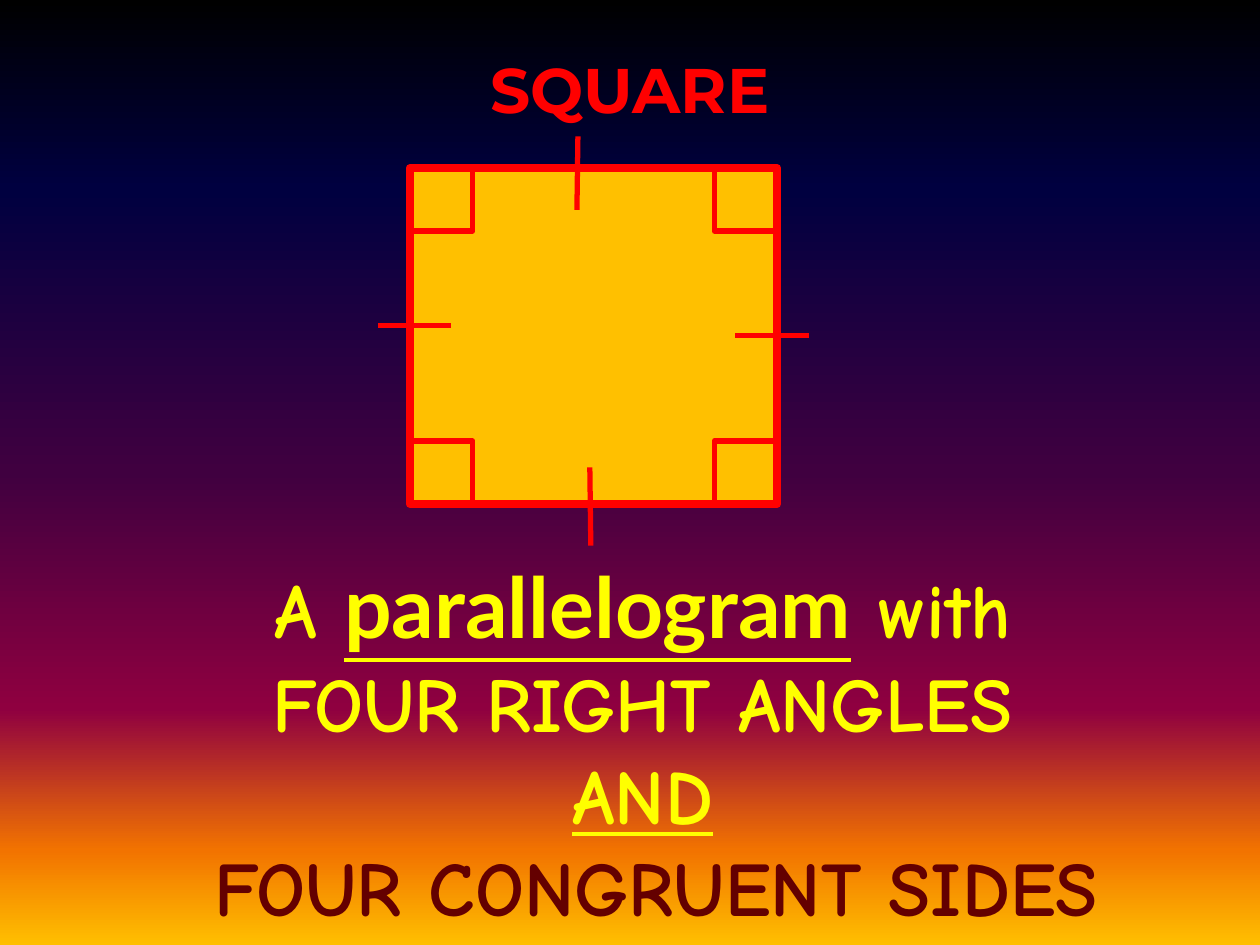
"""Build a slide that defines the square by its angles and sides."""
from dataclasses import dataclass
from itertools import product
from typing import Optional

from lxml.etree import SubElement
from pptx import Presentation
from pptx.dml.color import RGBColor
from pptx.enum.shapes import MSO_CONNECTOR, MSO_SHAPE
from pptx.enum.text import MSO_ANCHOR, PP_ALIGN
from pptx.oxml.ns import qn
from pptx.slide import Slide
from pptx.util import Cm, Pt

COLOURS = {"red": "FF0000", "gold": "FFC000", "yellow": "FFFF00", "maroon": "640000"}
SUNSET = {0: "000000", 20: "000040", 50: "400040", 75: "8F0040", 90: "F27300", 100: "FFBF00"}


@dataclass(frozen=True)
class Box:
    left: float
    top: float
    width: float
    height: float

    def lengths(self) -> tuple:
        return Cm(self.left), Cm(self.top), Cm(self.width), Cm(self.height)


@dataclass(frozen=True)
class Tick:
    start_x: float
    start_y: float
    end_x: float
    end_y: float


@dataclass(frozen=True)
class Phrase:
    text: str
    colour: str = "yellow"
    font: str = "Comic Neue"
    size: int = 44
    underline: bool = False


SQUARE = Box(8.26, 3.39, 7.41, 6.77)
CORNER_SIDE = 1.27
TICKS = [
    Tick(7.62, 6.56, 9.1, 6.56),
    Tick(11.89, 9.42, 11.91, 11),
    Tick(11.65, 2.75, 11.63, 4.23),
    Tick(14.82, 6.77, 16.3, 6.77),
]
DEFINITION = [
    [Phrase("A "), Phrase("parallelogram", font="Lato", size=48, underline=True), Phrase(" with ")],
    [Phrase("FOUR RIGHT ANGLES ")],
    [Phrase("AND", underline=True), Phrase(" ")],
    [Phrase("FOUR CONGRUENT SIDES", colour="maroon")],
]


def colour_of(name: str) -> RGBColor:
    return RGBColor.from_string(COLOURS[name])


def paint_background(slide: Slide) -> None:
    fill = slide.background.fill
    fill.gradient()
    fill.gradient_angle = 270
    stops = slide.element.find(".//" + qn("a:gsLst"))
    for stop in list(stops):
        stops.remove(stop)
    for percent, colour in SUNSET.items():
        stop = SubElement(stops, qn("a:gs"), pos=str(percent * 1000))
        SubElement(stop, qn("a:srgbClr"), val=colour)


def draw_rectangle(slide: Slide, box: Box, line_width: float, fill: Optional[str] = None) -> None:
    shape = slide.shapes.add_shape(MSO_SHAPE.RECTANGLE, *box.lengths())
    shape.shadow.inherit = False
    if fill:
        shape.fill.solid()
        shape.fill.fore_color.rgb = colour_of(fill)
    else:
        shape.fill.background()
    shape.line.color.rgb = colour_of("red")
    shape.line.width = Pt(line_width)


def draw_corners(slide: Slide) -> None:
    lefts = (SQUARE.left, SQUARE.left + SQUARE.width - CORNER_SIDE)
    tops = (SQUARE.top, SQUARE.top + SQUARE.height - CORNER_SIDE)
    for left, top in product(lefts, tops):
        draw_rectangle(slide, Box(left, top, CORNER_SIDE, CORNER_SIDE), 3)


def draw_tick(slide: Slide, tick: Tick) -> None:
    connector = slide.shapes.add_connector(
        MSO_CONNECTOR.STRAIGHT,
        Cm(tick.start_x), Cm(tick.start_y), Cm(tick.end_x), Cm(tick.end_y),
    )
    connector.line.color.rgb = colour_of("red")
    connector.line.width = Pt(3)
    SubElement(connector.element.spPr, qn("a:effectLst"))


def write_phrase(paragraph, phrase: Phrase) -> None:
    run = paragraph.add_run()
    run.text = phrase.text
    run.font.name = phrase.font
    run.font.size = Pt(phrase.size)
    run.font.bold = True
    run.font.underline = phrase.underline
    run.font.color.rgb = colour_of(phrase.colour)


def write_title(slide: Slide) -> None:
    title = slide.shapes.title
    title.left, title.top, title.width, title.height = Box(2.54, 0.84, 20.32, 1.9).lengths()
    text_frame = title.text_frame
    text_frame.word_wrap = False
    text_frame.vertical_anchor = MSO_ANCHOR.MIDDLE
    paragraph = text_frame.paragraphs[0]
    paragraph.alignment = PP_ALIGN.CENTER
    write_phrase(paragraph, Phrase("SQUARE", "red", "Montserrat", 36))


def write_definition(slide: Slide) -> None:
    text_frame = slide.shapes.add_textbox(*Box(1.27, 11.05, 23.93, 7.95).lengths()).text_frame
    text_frame.word_wrap = True
    for index, phrases in enumerate(DEFINITION):
        paragraph = text_frame.add_paragraph() if index else text_frame.paragraphs[0]
        paragraph.alignment = PP_ALIGN.CENTER
        for phrase in phrases:
            write_phrase(paragraph, phrase)


def main() -> None:
    presentation = Presentation()
    presentation.slide_width, presentation.slide_height = Cm(25.4), Cm(19.05)
    slide = presentation.slides.add_slide(presentation.slide_layouts[5])
    paint_background(slide)
    write_title(slide)
    draw_rectangle(slide, SQUARE, 4.5, "gold")
    draw_corners(slide)
    for tick in TICKS:
        draw_tick(slide, tick)
    write_definition(slide)
    presentation.save("out.pptx")


if __name__ == "__main__":
    main()
